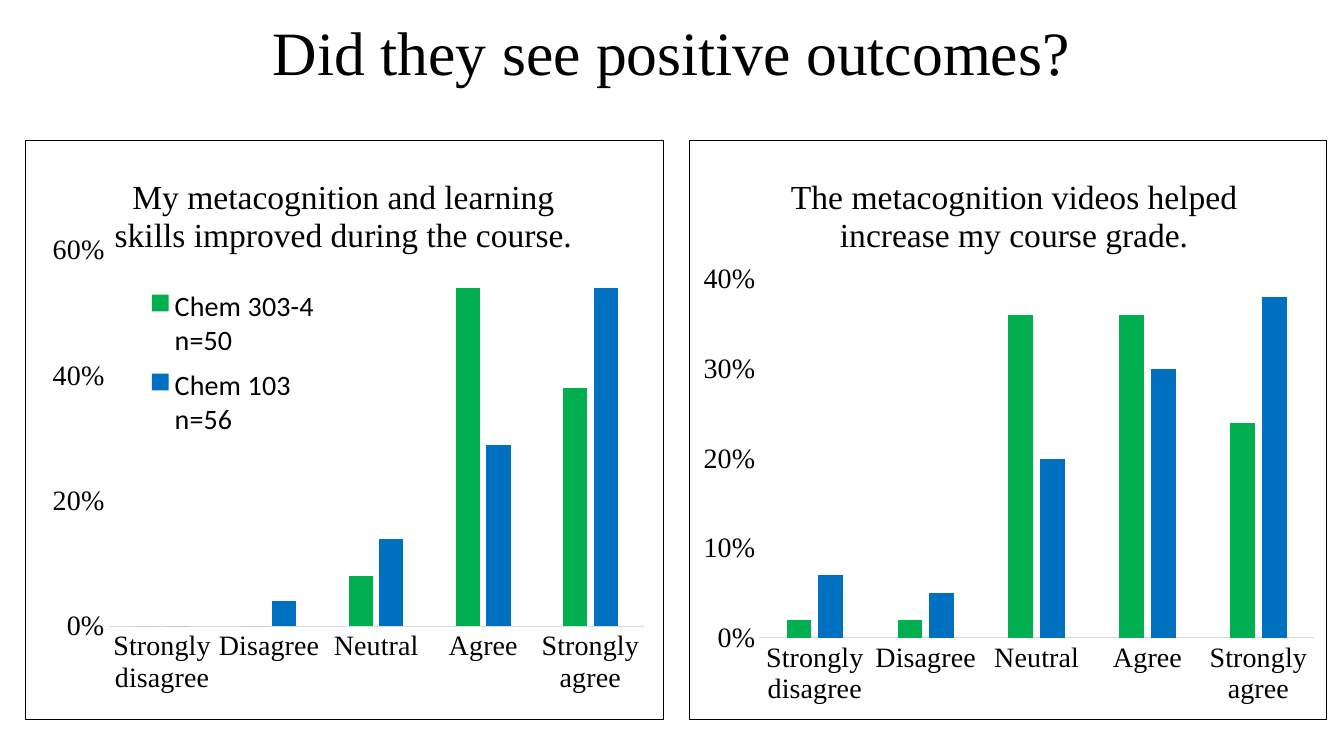
from dataclasses import dataclass
from typing import Any, Optional

from pptx import Presentation
from pptx.chart.chart import Chart
from pptx.chart.data import CategoryChartData
from pptx.dml.color import RGBColor
from pptx.enum.chart import XL_CHART_TYPE, XL_LEGEND_POSITION, XL_TICK_MARK
from pptx.enum.text import MSO_ANCHOR, PP_ALIGN
from pptx.oxml import parse_xml
from pptx.oxml.ns import nsdecls, qn
from pptx.util import Pt

COLUMNS = XL_CHART_TYPE.COLUMN_CLUSTERED
LEGEND_BOTTOM = XL_LEGEND_POSITION.BOTTOM
NO_TICK = XL_TICK_MARK.NONE
MIDDLE = MSO_ANCHOR.MIDDLE
CENTER = PP_ALIGN.CENTER

COLORS = {
    "text": "000000",
    "border": "000000",
    "axis": "D9D9D9",
    "upper_course": "00B050",
    "first_course": "0070C0",
}
SERIF = "Times New Roman"
SANS = "Calibri"
ANSWERS = ["Strongly disagree", "Disagree", "Neutral", "Agree", "Strongly agree"]
CHART_TOP, CHART_WIDTH, CHART_HEIGHT = 100, 456, 414
LINE_WIDTH = 0.75


@dataclass(frozen=True)
class AnswerSeries:
    name: str
    color: str
    values: list[float]


@dataclass(frozen=True)
class Layout:
    """Place inside a chart, as fractions of the chart's size."""
    x: float
    y: float
    w: Optional[float] = None
    h: Optional[float] = None


@dataclass(frozen=True)
class SurveyChart:
    left: float
    title: str
    title_place: Layout
    plot_place: Layout
    maximum: float
    step: float
    series: list[AnswerSeries]
    legend_place: Optional[Layout] = None


SURVEY_CHARTS = [
    SurveyChart(
        18, "My metacognition and learning skills improved during the course.",
        Layout(0.13, 0.05), Layout(0.13, 0.19, 0.84, 0.65), 0.6, 0.2,
        [
            AnswerSeries("Chem 303-4 n=50", "upper_course", [0, 0, 0.08, 0.54, 0.38]),
            AnswerSeries("Chem 103 n=56", "first_course", [0, 0.04, 0.14, 0.29, 0.54]),
        ],
        Layout(0.18, 0.24, 0.29, 0.29),
    ),
    SurveyChart(
        492, "The metacognition videos helped increase my course grade.",
        Layout(0.15, 0.05), Layout(0.11, 0.24, 0.87, 0.62), 0.4, 0.1,
        [
            AnswerSeries("Series 1", "upper_course", [0.02, 0.02, 0.36, 0.36, 0.24]),
            AnswerSeries("Series 2", "first_course", [0.07, 0.05, 0.2, 0.3, 0.38]),
        ],
    ),
]


def set_attributes(target: Any, values: dict[str, Any]) -> None:
    for name, value in values.items():
        setattr(target, name, value)


def format_font(font: Any, size: float, name: str = SERIF) -> None:
    set_attributes(font, {"size": Pt(size), "name": name, "bold": False})
    font.color.rgb = RGBColor.from_string(COLORS["text"])


def place_part(part: Any, previous: Optional[str], layout: Layout, inner: bool = False) -> None:
    """Give a chart part a manual layout after the named child, or as first child."""
    for old_layout in part.findall(qn("c:layout")):
        part.remove(old_layout)
    fields = {"layoutTarget": "inner"} if inner else {}
    fields |= {"xMode": "edge", "yMode": "edge", "x": layout.x, "y": layout.y}
    if layout.w is not None:
        fields |= {"w": layout.w, "h": layout.h}
    children = "".join(f'<c:{tag} val="{value}"/>' for tag, value in fields.items())
    element = parse_xml(
        f'<c:layout {nsdecls("c")}><c:manualLayout>{children}</c:manualLayout></c:layout>'
    )
    if previous is None:
        part.insert(0, element)
    else:
        part.find(qn(previous)).addnext(element)


def add_border(chart: Chart) -> None:
    border = parse_xml(
        f'<c:spPr {nsdecls("c", "a")}><a:noFill/><a:ln w="{Pt(LINE_WIDTH)}"><a:solidFill>'
        f'<a:srgbClr val="{COLORS["border"]}"/></a:solidFill></a:ln></c:spPr>'
    )
    chart.element.find(qn("c:chart")).addnext(border)


def format_axes(chart: Chart, survey: SurveyChart) -> None:
    for axis in (chart.category_axis, chart.value_axis):
        set_attributes(axis, {
            "major_tick_mark": NO_TICK,
            "minor_tick_mark": NO_TICK,
            "has_major_gridlines": False,
        })
        format_font(axis.tick_labels.font, 20)
    axis_line = chart.category_axis.format.line
    axis_line.width = Pt(LINE_WIDTH)
    axis_line.color.rgb = RGBColor.from_string(COLORS["axis"])
    set_attributes(chart.value_axis, {
        "minimum_scale": 0,
        "maximum_scale": survey.maximum,
        "major_unit": survey.step,
    })
    set_attributes(chart.value_axis.tick_labels, {
        "number_format": "0%",
        "number_format_is_linked": False,
    })
    chart.value_axis.format.line.fill.background()


def add_survey_chart(slide: Any, survey: SurveyChart) -> None:
    data = CategoryChartData(number_format="0%")
    data.categories = ANSWERS
    for series in survey.series:
        data.add_series(series.name, series.values)
    chart = slide.shapes.add_chart(
        COLUMNS, Pt(survey.left), Pt(CHART_TOP), Pt(CHART_WIDTH), Pt(CHART_HEIGHT), data
    ).chart
    format_font(chart.font, 20)
    add_border(chart)

    chart.has_title = True
    title_frame = chart.chart_title.text_frame
    title_frame.text = survey.title
    format_font(title_frame.paragraphs[0].runs[0].font, 24)
    chart_element = chart.element.find(qn("c:chart"))
    place_part(chart_element.find(qn("c:title")), "c:tx", survey.title_place)
    place_part(chart_element.find(qn("c:plotArea")), None, survey.plot_place, inner=True)

    plot = chart.plots[0]
    set_attributes(plot, {"gap_width": 219, "overlap": -27, "vary_by_categories": False})
    for drawn, series in zip(plot.series, survey.series):
        drawn.format.fill.solid()
        drawn.format.fill.fore_color.rgb = RGBColor.from_string(COLORS[series.color])
    format_axes(chart, survey)

    chart.has_legend = survey.legend_place is not None
    if survey.legend_place is not None:
        set_attributes(chart.legend, {"position": LEGEND_BOTTOM, "include_in_layout": False})
        format_font(chart.legend.font, 20, SANS)
        legend = chart_element.find(qn("c:legend"))
        place_part(legend, "c:legendPos", survey.legend_place)


def add_heading(slide: Any, text: str) -> None:
    frame = slide.shapes.add_textbox(Pt(48), Pt(12), Pt(864), Pt(56)).text_frame
    set_attributes(frame, {"word_wrap": True, "vertical_anchor": MIDDLE})
    paragraph = frame.paragraphs[0]
    set_attributes(paragraph, {"text": text, "alignment": CENTER, "line_spacing": 0.9})
    format_font(paragraph.runs[0].font, 44)


def main() -> None:
    presentation = Presentation()
    set_attributes(presentation, {"slide_width": Pt(960), "slide_height": Pt(540)})
    slide = presentation.slides.add_slide(presentation.slide_layouts[6])
    add_heading(slide, "Did they see positive outcomes?")
    for survey in SURVEY_CHARTS:
        add_survey_chart(slide, survey)
    presentation.save("out.pptx")


if __name__ == "__main__":
    main()
